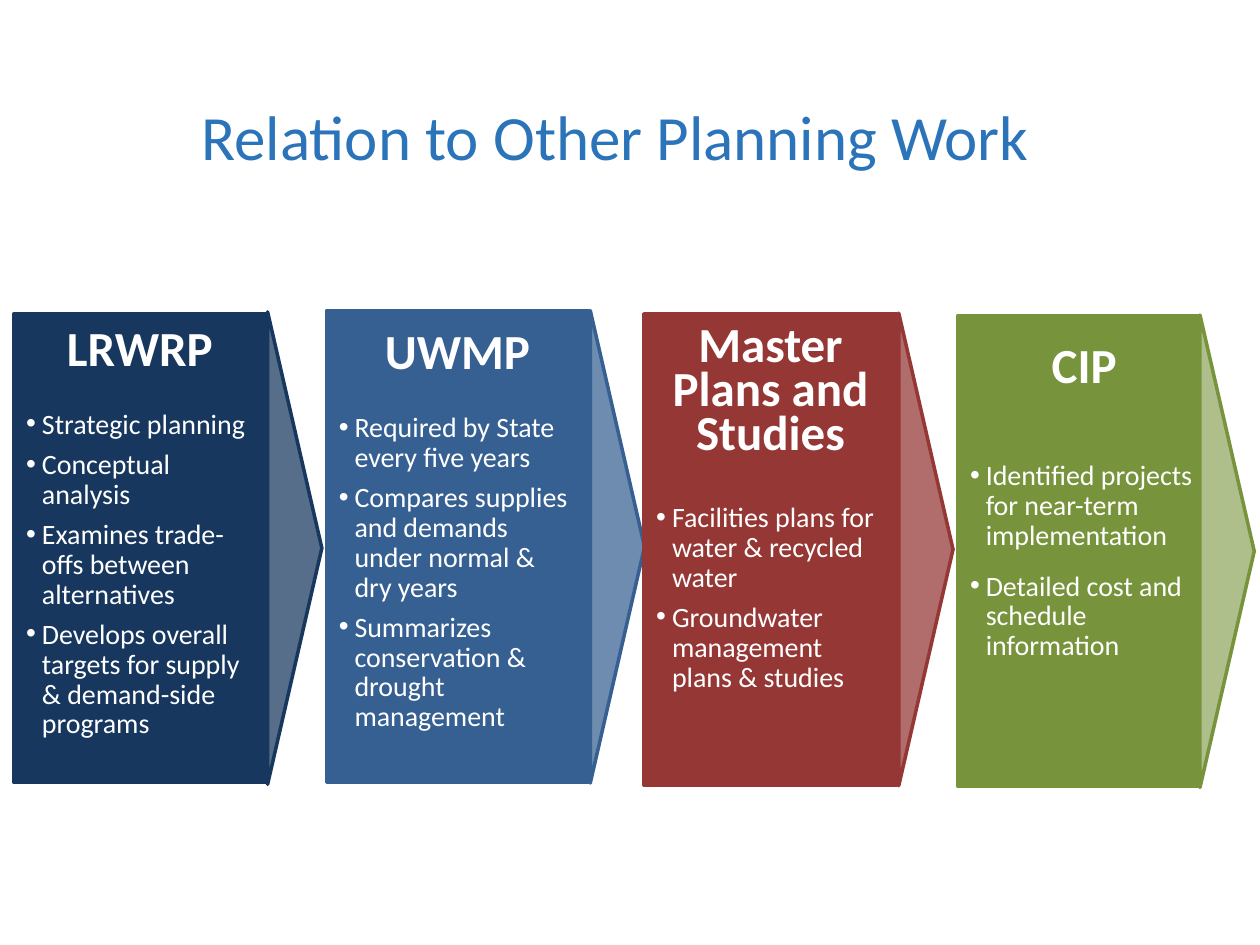
from pptx import Presentation
from pptx.dml.color import RGBColor
from pptx.enum.shapes import MSO_SHAPE as Shape
from pptx.enum.text import MSO_ANCHOR as Anchor, PP_ALIGN as Align
from pptx.oxml.ns import qn
from pptx.util import Pt
from lxml.etree import SubElement

TIP_DEPTH, TIP_LENGTH = 31, 270
WHITE = "FFFFFF"

# heading, colour, tip opacity %, box (left, top, width, height),
# top inset, right inset, heading line spacing, gap below heading, gap below bullets, bullets
STAGES = [
    ("LRWRP", "17375E", 72, (7.9, 179.3, 144, 267.8), 2, 7.2, None, 19.5, 6,
     ["Strategic planning", "Conceptual analysis",
      "Examines trade- offs between alternatives",
      "Develops overall targets for supply & demand-side programs"]),
    ("UWMP", "376092", 72, (186.5, 177.8, 149.8, 269.3), 5.5, 7.2, None, 19.5, 6,
     ["Required by State every five years",
      "Compares supplies and demands under normal & dry years",
      "Summarizes conservation & drought management"]),
    ("Master Plans and Studies", "953735", 73, (367.9, 179.3, 144.7, 269.3),
     8.5, 7.2, 25, 25, 6,
     ["Facilities plans for water & recycled water",
      "Groundwater management plans & studies"]),
    ("CIP", "77933C", 59, (547.2, 180.7, 137.5, 268.6), 10.5, 0, None, 39, 12,
     ["Identified projects for near-term implementation",
      "Detailed cost and schedule information"]),
]


def set_font(para, size, color, bold=False):
    font = para.font
    font.name, font.size, font.bold = "Calibri", Pt(size), bold
    font.color.rgb = RGBColor.from_string(color)


def add_block(kind, left, top, width, height, color):
    """Add a preset shape whose fill and outline share one colour."""
    block = slide.shapes.add_shape(kind, Pt(left), Pt(top), Pt(width), Pt(height))
    block.shadow.inherit = False
    block.fill.solid()
    block.fill.fore_color.rgb = RGBColor.from_string(color)
    block.line.color.rgb = RGBColor.from_string(color)
    block.line.width = Pt(2)
    return block


deck = Presentation()
deck.slide_width, deck.slide_height = Pt(720), Pt(540)
slide = deck.slides.add_slide(deck.slide_layouts[6])

title = slide.shapes.add_textbox(Pt(108), Pt(21.6), Pt(581.8), Pt(80.6)).text_frame
title.word_wrap = True
title.vertical_anchor = Anchor.BOTTOM
para = title.paragraphs[0]
para.text = "Relation to Other Planning Work"
para.line_spacing = Pt(38)
set_font(para, 36, "2B74BA")

for (heading, color, opacity, (left, top, width, height), top_inset, right_inset,
     heading_spacing, heading_gap, bullet_gap, bullets) in STAGES:
    box = add_block(Shape.RECTANGLE, left, top, width, height, color)
    frame = box.text_frame
    frame.word_wrap = True
    frame.vertical_anchor = Anchor.TOP
    frame.margin_top, frame.margin_right = Pt(top_inset), Pt(right_inset)

    para = frame.paragraphs[0]
    para.text = heading
    para.alignment = Align.CENTER
    para.space_after = Pt(heading_gap)
    if heading_spacing:
        para.line_spacing = Pt(heading_spacing)
    set_font(para, 28, WHITE, bold=True)

    for bullet in bullets:
        para = frame.add_paragraph()
        para.text = bullet
        para.alignment = Align.LEFT
        para.line_spacing = Pt(17)
        para.space_after = Pt(bullet_gap)
        properties = para._p.get_or_add_pPr()
        properties.set("marL", str(Pt(9)))
        properties.set("indent", str(Pt(-9)))
        SubElement(properties, qn("a:buFont")).set("typeface", "Arial")
        SubElement(properties, qn("a:buChar")).set("char", "•")
        set_font(para, 16, WHITE)

    # The tip is a triangle turned a quarter, so its frame is placed by its centre
    center_x = left + width + 1 + TIP_DEPTH / 2
    center_y = top + height / 2
    tip = add_block(Shape.ISOSCELES_TRIANGLE, center_x - TIP_LENGTH / 2,
                    center_y - TIP_DEPTH / 2, TIP_LENGTH, TIP_DEPTH, color)
    tip.rotation = 90
    fill_color = tip._element.spPr.find(qn("a:solidFill"))[0]
    SubElement(fill_color, qn("a:alpha")).set("val", str(opacity * 1000))

deck.save("out.pptx")
